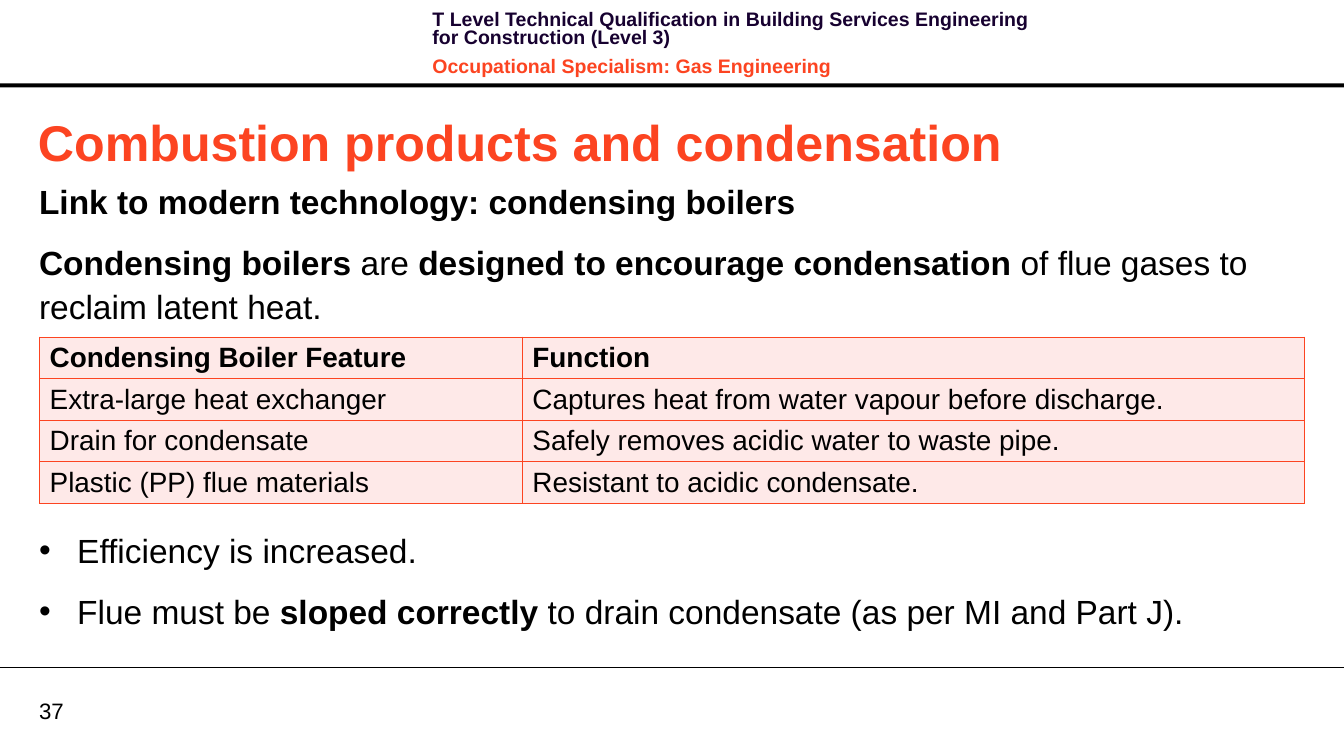
from pptx import Presentation, util as u
from pptx.dml.color import RGBColor
from pptx.enum import shapes, text
from pptx.oxml import parse_xml
from pptx.oxml.ns import nsdecls

# Content: ** switches bold on and off
HEAD = [
    ("**T Level Technical Qualification in Building Services Engineering "
     "for Construction (Level 3)", "navy"),
    ("**Occupational Specialism: Gas Engineering", "red"),
]
TITLE = [("**Combustion products and condensation", "red")]
INTRO = [
    ("**Link to modern technology: condensing boilers", "ink"),
    ("**Condensing boilers** are **designed to encourage condensation** "
     "of flue gases to reclaim latent heat.", "ink"),
]
POINTS = [
    ("Efficiency is increased.", "ink"),
    ("Flue must be **sloped correctly** to drain condensate "
     "(as per MI and Part J).", "ink"),
]
PAGE = [("37", "ink")]
ROWS = [
    ("**Condensing Boiler Feature", "**Function"),
    ("Extra-large heat exchanger", "Captures heat from water vapour before discharge."),
    ("Drain for condensate", "Safely removes acidic water to waste pipe."),
    ("Plastic (PP) flue materials", "Resistant to acidic condensate."),
]

# Theme
THEME = {
    "font": "Arial",
    "ink": "000000", "navy": "170130", "red": "FC4421", "pink": "FEE9E8",
    "head": 14, "title": 36, "body": 24, "cell": 20, "page": 16,
}

# Layout: percent of the slide's width and height
WIDE, HIGH = 13.39, 7.48
EDGE = 2.91
BAR = (0, 11.1, 100, 0.53)
RULE = 88.9
GRID = (2.95, 44.92)
COLS = (35.92, 58.18)
ROW = 5.49
MID = text.MSO_ANCHOR.MIDDLE
BODY = {"line_spacing": 1.1, "space_after": u.Pt(12)}
TIGHT = {"line_spacing": u.Pt(13.1), "space_after": u.Pt(4),
         "space_before": u.Pt(4)}
INSET = (0.1, 0.05)
# lines, size, place, insets, frame format, paragraph format, bullets
BOXES = [
    (HEAD, "head", (31.44, 0.94, 47.57, 8.56), INSET, {}, TIGHT, False),
    (TITLE, "title", (2.09, 14.04, 95, 9.49), INSET,
     {"vertical_anchor": MID}, {}, False),
    (INTRO, "body", (EDGE, 23.53, 92.46, 21), (0, 0), {}, BODY, False),
    (POINTS, "body", (EDGE, 70.05, 92.46, 16), (0, 0), {}, BODY, True),
    (PAGE, "page", (EDGE, 92.78, 4.78, 3.61), (0, 0),
     {"vertical_anchor": MID}, {}, False),
]


def across(part):
    return u.Inches(WIDE * part / 100)


def down(part):
    return u.Inches(HIGH * part / 100)


def place(box):
    x, y, w, h = box
    return across(x), down(y), across(w), down(h)


def color(name):
    return RGBColor.from_string(THEME[name])


def apply(item, form):
    for key, value in form.items():
        setattr(item, key, value)


def write(para, line, size, tint):
    for i, part in enumerate(line.split("**")):
        if part:
            run = para.add_run()
            run.text = part
            apply(run.font, {"name": THEME["font"], "bold": i % 2 == 1,
                             "size": u.Pt(THEME[size])})
            run.font.color.rgb = color(tint)


def bullet(para):
    props = para._p.get_or_add_pPr()
    props.set("marL", str(u.Inches(0.38)))
    props.set("indent", str(-u.Inches(0.38)))
    props.append(parse_xml(f'<a:buFont {nsdecls("a")} typeface="Arial"/>'))
    props.append(parse_xml(f'<a:buChar {nsdecls("a")} char="•"/>'))


def add_box(slide, lines, size, box, inset, form, style, dots):
    frame = slide.shapes.add_textbox(*place(box)).text_frame
    side, top = map(u.Inches, inset)
    apply(frame, {"word_wrap": True, "margin_left": side, "margin_right": side,
                  "margin_top": top, "margin_bottom": top, **form})
    for i, (line, tint) in enumerate(lines):
        para = frame.add_paragraph() if i else frame.paragraphs[0]
        if dots:
            bullet(para)
        apply(para, style)
        if not i:
            para.space_before = u.Pt(0)
        write(para, line, size, tint)


def border(cell):
    props = cell._tc.get_or_add_tcPr()
    for side in "LRTB":
        props.append(parse_xml(
            f'<a:ln{side} {nsdecls("a")} w="{u.Pt(1)}"><a:solidFill>'
            f'<a:srgbClr val="{THEME["red"]}"/></a:solidFill></a:ln{side}>'))


def add_grid(slide):
    box = (*GRID, sum(COLS), ROW * len(ROWS))
    table = slide.shapes.add_table(len(ROWS), len(COLS), *place(box)).table
    apply(table, {"first_row": False, "horz_banding": False})
    for col, share in zip(table.columns, COLS):
        col.width = across(share)
    for row, words in zip(table.rows, ROWS):
        row.height = down(ROW)
        for cell, line in zip(row.cells, words):
            apply(cell, {"vertical_anchor": MID, "margin_top": u.Inches(0.04),
                         "margin_bottom": u.Inches(0.04)})
            border(cell)
            cell.fill.solid()
            cell.fill.fore_color.rgb = color("pink")
            write(cell.text_frame.paragraphs[0], line, "cell", "ink")


def add_lines(slide):
    bar = slide.shapes.add_shape(shapes.MSO_SHAPE.RECTANGLE, *place(BAR))
    bar.shadow.inherit = False
    bar.fill.solid()
    bar.fill.fore_color.rgb = color("ink")
    bar.line.fill.background()
    rule = slide.shapes.add_connector(
        shapes.MSO_CONNECTOR.STRAIGHT, 0, down(RULE), across(100), down(RULE))
    rule.line.width = u.Pt(0.75)
    rule.line.color.rgb = color("ink")
    rule._element.spPr.append(parse_xml(f'<a:effectLst {nsdecls("a")}/>'))


def main():
    deck = Presentation()
    apply(deck, {"slide_width": across(100), "slide_height": down(100)})
    slide = deck.slides.add_slide(deck.slide_layouts[6])
    add_lines(slide)
    for box in BOXES:
        add_box(slide, *box)
    add_grid(slide)
    deck.save("out.pptx")


if __name__ == "__main__":
    main()
